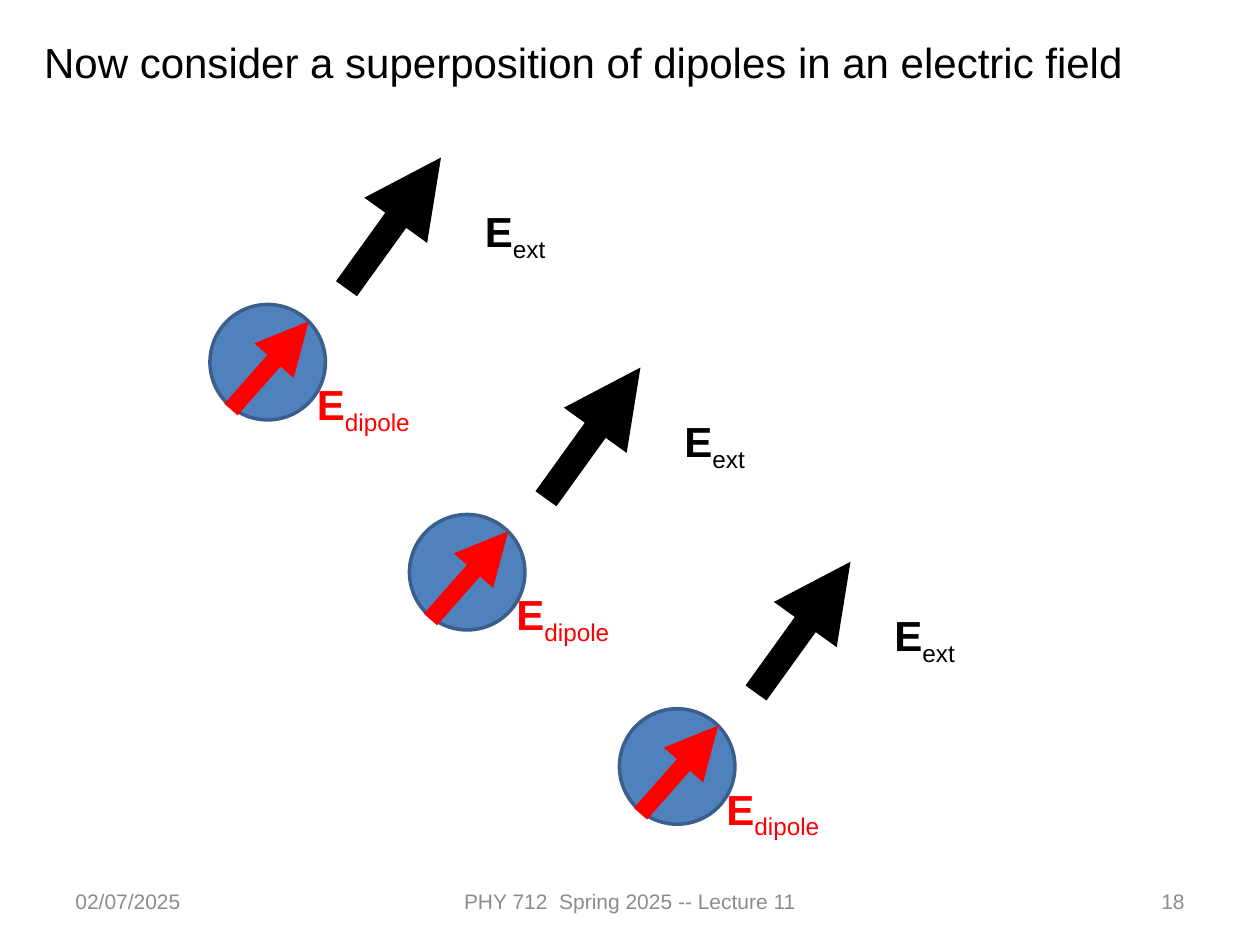
import pptx
import pptx.dml.color
import pptx.enum.shapes
import pptx.enum.text
import pptx.oxml.ns
import pptx.util
import lxml.etree

RGBColor = pptx.dml.color.RGBColor
ALIGN = pptx.enum.text.PP_ALIGN
ANCHOR = pptx.enum.text.MSO_ANCHOR

BLACK = RGBColor(0x00, 0x00, 0x00)
RED = RGBColor(0xFF, 0x00, 0x00)
GREY = RGBColor(0x8C, 0x8C, 0x8C)
BLUE = RGBColor(0x4F, 0x81, 0xBD)
DARK_BLUE = RGBColor(0x3A, 0x5F, 0x8C)

COLUMNS, ROWS = 120, 90
TITLE_ONLY = 5


class SlideBuilder:
    """Holds the style and the current slide; lengths are grid columns and rows."""

    font_name = "Arial"
    text_size = 24
    footer_size = 12

    def __init__(self, presentation):
        self.cell_width = presentation.slide_width / COLUMNS
        self.cell_height = presentation.slide_height / ROWS
        self.slide = presentation.slides.add_slide(presentation.slide_layouts[TITLE_ONLY])

    def place(self, column, row):
        return round(column * self.cell_width), round(row * self.cell_height)

    def add_text(self, paragraph, text, color, size, bold=False, subscript=False):
        run = paragraph.add_run()
        run.text = text
        run.font.name = self.font_name
        run.font.size = pptx.util.Pt(size)
        run.font.bold = bold
        run.font.color.rgb = color
        if subscript:
            run._r.get_or_add_rPr().set("baseline", "-25000")

    def title(self, text, column, row, width, height):
        shape = self.slide.shapes.title
        shape.left, shape.top = self.place(column, row)
        shape.width, shape.height = self.place(width, height)
        frame = shape.text_frame
        frame.auto_size = pptx.enum.text.MSO_AUTO_SIZE.NONE
        frame.vertical_anchor = ANCHOR.TOP
        paragraph = frame.paragraphs[0]
        paragraph.alignment = ALIGN.LEFT
        self.add_text(paragraph, text, BLACK, self.text_size)

    def text_box(self, column, row, width, height, align=ALIGN.LEFT, anchor=ANCHOR.TOP):
        shape = self.slide.shapes.add_textbox(*self.place(column, row), *self.place(width, height))
        shape.text_frame.word_wrap = True
        shape.text_frame.vertical_anchor = anchor
        paragraph = shape.text_frame.paragraphs[0]
        paragraph.alignment = align
        return paragraph

    def footer(self, text, column, width, align):
        paragraph = self.text_box(column, 83.4, width, 4.8, align, ANCHOR.MIDDLE)
        self.add_text(paragraph, text, GREY, self.footer_size)

    def field_label(self, subscript, column, row, color):
        paragraph = self.text_box(column, row, 13, 6)
        self.add_text(paragraph, "E", color, self.text_size, bold=True)
        self.add_text(paragraph, subscript, color, self.text_size, subscript=True)

    def circle(self, column, row, diameter):
        shape = self.slide.shapes.add_shape(
            pptx.enum.shapes.MSO_SHAPE.OVAL,
            *self.place(column, row), *self.place(diameter, diameter))
        shape.shadow.inherit = False
        shape.fill.solid()
        shape.fill.fore_color.rgb = BLUE
        shape.line.color.rgb = DARK_BLUE
        shape.line.width = pptx.util.Pt(2)

    def arrow(self, start, end, color, width):
        connector = self.slide.shapes.add_connector(
            pptx.enum.shapes.MSO_CONNECTOR.STRAIGHT, *self.place(*start), *self.place(*end))
        connector.line.color.rgb = color
        connector.line.width = pptx.util.Pt(width)
        qualified = pptx.oxml.ns.qn
        lxml.etree.SubElement(
            connector.line._get_or_add_ln(), qualified("a:tailEnd"), type="triangle")
        lxml.etree.SubElement(connector._element.spPr, qualified("a:effectLst"))

    def dipole(self, column, row):
        """Draw one dipole with both field arrows, relative to its circle's corner."""
        self.circle(column, row, 11)
        self.arrow((column + 13, row - 1.5), (column + 22, row - 14), BLACK, 14.75)
        self.arrow((column + 2, row + 10), (column + 9.4, row + 1.6), RED, 10)
        self.field_label("ext", column + 25, row - 10, BLACK)
        self.field_label("dipole", column + 9, row + 6.5, RED)


def main():
    presentation = pptx.Presentation()
    presentation.slide_width = pptx.util.Inches(10)
    presentation.slide_height = pptx.util.Inches(7.5)
    builder = SlideBuilder(presentation)

    # Footer line
    builder.footer("02/07/2025", 6, 28, ALIGN.LEFT)
    builder.footer("PHY 712  Spring 2025 -- Lecture 11", 41, 38, ALIGN.CENTER)
    builder.footer("18", 86, 28, ALIGN.RIGHT)

    # Title
    builder.title("Now consider a superposition of dipoles in an electric field", 3, 2.9, 112, 6)

    # Dipoles in the external field
    for column, row in ((20, 29), (59, 67.5), (39, 49)):
        builder.dipole(column, row)

    presentation.save("out.pptx")


if __name__ == "__main__":
    main()
